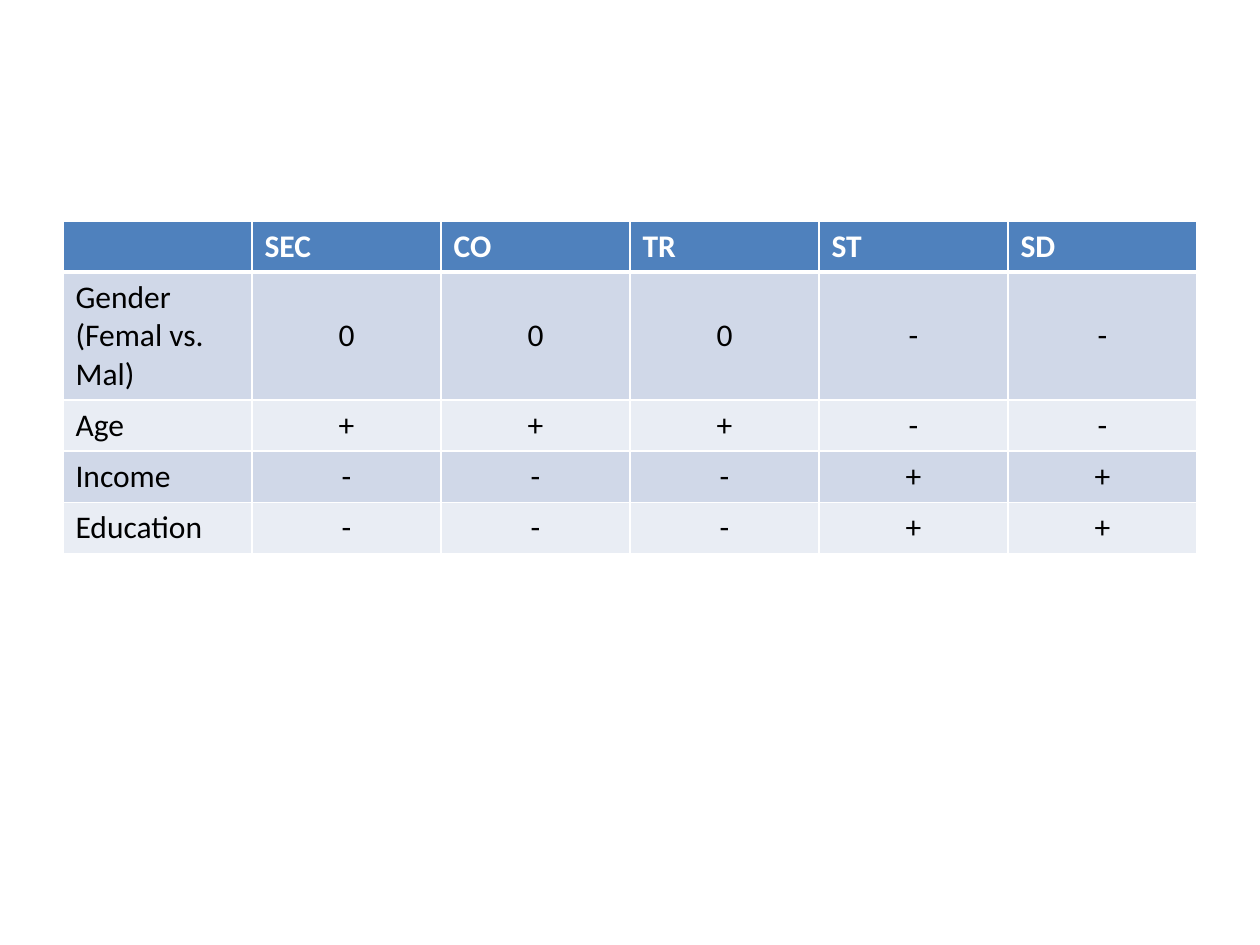
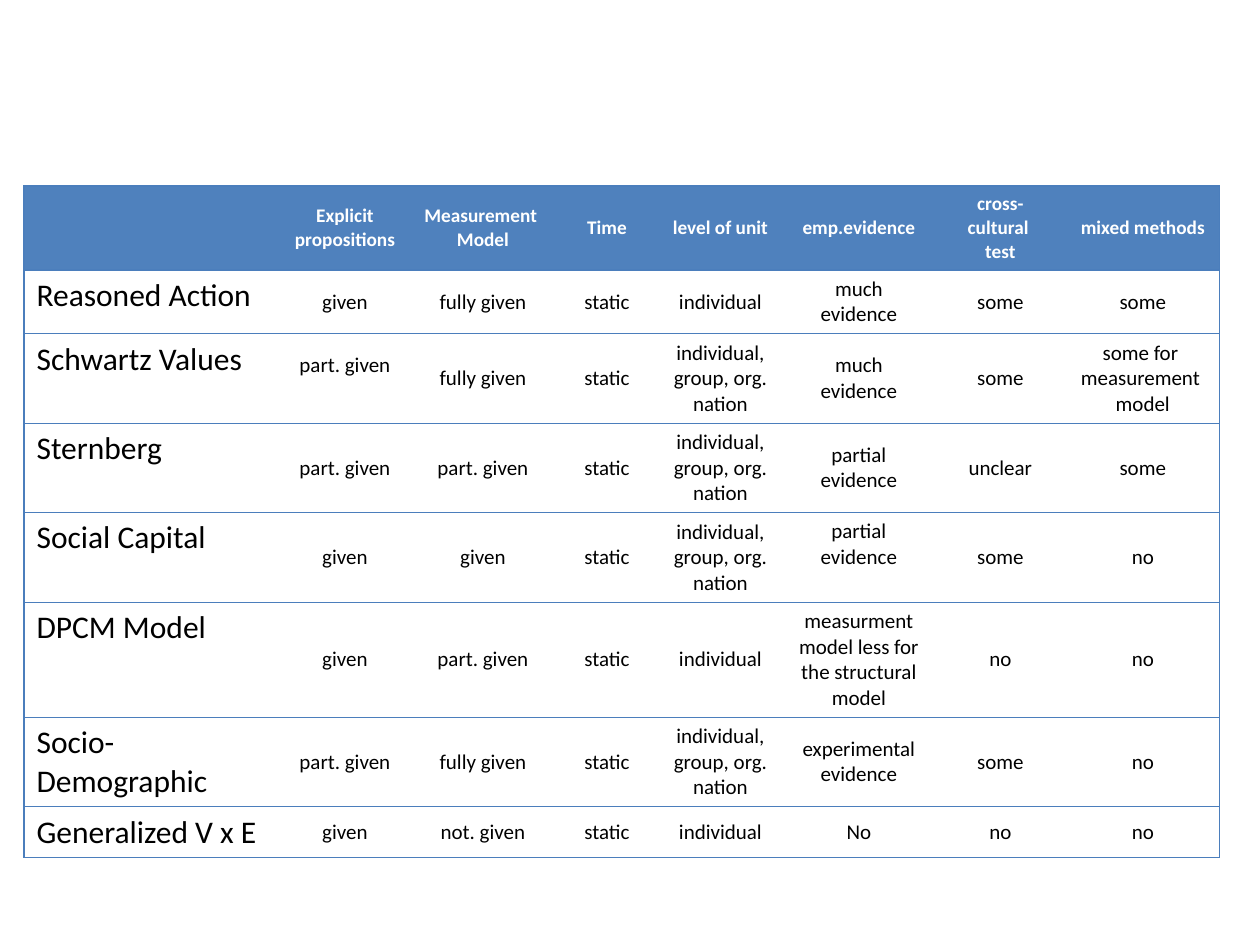
from lxml import etree
from pptx import Presentation, util as u
from pptx.dml.color import RGBColor
from pptx.enum import text
from pptx.oxml.ns import qn

# Content
ALL_LEVELS = "individual, group, org. nation"

EFFECTS_ROWS = [
    ["", "SEC", "CO", "TR", "ST", "SD"],
    ["Gender (Femal vs. Mal)", *"000--"],
    ["Age", *"+++--"],
    ["Income", *"---++"],
    ["Education", *"---++"],
]

THEORY_ROWS = [
    ["", "Explicit\npropositions", "Measurement \nModel", "Time", "level of unit",
     "emp.evidence", "cross-cultural \ntest", "mixed methods"],
    ["Reasoned Action", "given", "fully given", "static", "individual",
     "much evidence", "some", "some"],
    ["Schwartz Values", "part. given", "fully given", "static", ALL_LEVELS,
     "much evidence", "some", "some for \nmeasurement \nmodel"],
    ["Sternberg", "part. given", "part. given", "static", ALL_LEVELS,
     "partial evidence", "unclear", "some"],
    ["Social Capital", "given", "given", "static", ALL_LEVELS,
     "partial evidence", "some", "no"],
    ["DPCM Model", "given", "part. given", "static", "individual",
     "measurment model less for the structural model", "no", "no"],
    ["Socio-Demographic", "part. given", "fully given", "static", ALL_LEVELS,
     "experimental evidence", "some", "no"],
    ["Generalized V x E", "given", "not. given", "static", "individual",
     "No", "no", "no"],
]

# Theme: colours, type sizes and line widths in points
THEME = {
    "font": "Calibri",
    "header": "4F81BD", "bands": ("D0D8E8", "E9EDF4"), "rule": "4B7EBC",
    "light": "FFFFFF", "dark": "000000",
    "label": 18, "small_header": 11, "small_body": 12,
    "thin": 0.75, "grid": 1, "heavy": 3,
}
NO_TABLE_STYLE = "{2D5ABB26-0587-4C30-8999-92F81FD0307C}"

# Lengths in px
PX_PER_INCH = 126
SLIDE_SIZE = (1260, 945)
ROW_HEIGHT = 51
RAISED_MARGIN = 32

TABLES = [
    {"rows": EFFECTS_ROWS, "left": 63, "top": 221, "height": 330,
     "columns": [189] * 6, "header_size": THEME["label"],
     "body_size": THEME["label"], "center_header": False,
     "bands": THEME["bands"], "grid": True, "raised": set()},
    {"rows": THEORY_ROWS, "left": 24, "top": 186, "height": 663,
     "columns": [256, 130, 146, 102, 125, 152, 131, 154],
     "header_size": THEME["small_header"], "body_size": THEME["small_body"],
     "center_header": True, "bands": None, "grid": False,
     "raised": {(2, 1), (4, 5)}},
]


def px(length):
    return u.Emu(round(length * 914400 / PX_PER_INCH))


def apply(target, values):
    for name, value in values.items():
        setattr(target, name, value)


def cell_borders(layout, row, column):
    """Return (colour, points) for the left, right, top and bottom edges."""
    if layout["grid"]:
        line = (THEME["light"], THEME["grid"])
        heavy = (THEME["light"], THEME["heavy"])
        return {"lnL": line, "lnR": line,
                "lnT": heavy if row == 1 else line,
                "lnB": heavy if row == 0 else line}
    rule = (THEME["rule"], THEME["thin"])
    last = len(layout["columns"]) - 1
    return {"lnL": rule if column == 0 else None,
            "lnR": rule if column == last else None,
            "lnT": rule, "lnB": rule}


def draw_borders(cell, borders):
    properties = cell._tc.get_or_add_tcPr()
    for position, (tag, border) in enumerate(borders.items()):
        line = etree.Element(qn(f"a:{tag}"))
        if border:
            colour, points = border
            line.set("w", str(int(u.Pt(points))))
            fill = etree.SubElement(line, qn("a:solidFill"))
            etree.SubElement(fill, qn("a:srgbClr"), val=colour)
        else:
            line.set("w", "0")
            etree.SubElement(line, qn("a:noFill"))
        properties.insert(position, line)


def fill_cell(cell, colour):
    if colour:
        cell.fill.solid()
        cell.fill.fore_color.rgb = RGBColor.from_string(colour)
    else:
        cell.fill.background()


def format_cell(cell, layout, row, column):
    is_header, is_label = row == 0, column == 0
    centered = not is_label and (not is_header or layout["center_header"])
    bands = layout["bands"]
    band = bands[(row - 1) % len(bands)] if bands else None
    size = layout["header_size"] if is_header else layout["body_size"]
    if is_label:
        size = THEME["label"]

    cell.text_frame.text = layout["rows"][row][column]
    cell.vertical_anchor = (text.MSO_ANCHOR.MIDDLE if centered
                            else text.MSO_ANCHOR.TOP)
    if (row, column) in layout["raised"]:
        cell.margin_bottom = px(RAISED_MARGIN)
    for paragraph in cell.text_frame.paragraphs:
        paragraph.alignment = (text.PP_ALIGN.CENTER if centered
                               else text.PP_ALIGN.LEFT)
        for run in paragraph.runs:
            apply(run.font, {"name": THEME["font"], "size": u.Pt(size),
                             "bold": is_header})
            run.font.color.rgb = RGBColor.from_string(
                THEME["light" if is_header else "dark"])
    fill_cell(cell, THEME["header"] if is_header else band)
    draw_borders(cell, cell_borders(layout, row, column))


def add_table_slide(presentation, layout):
    slide = presentation.slides.add_slide(presentation.slide_layouts[6])
    rows, columns = layout["rows"], layout["columns"]
    shape = slide.shapes.add_table(
        len(rows), len(columns), px(layout["left"]), px(layout["top"]),
        px(sum(columns)), px(layout["height"]))
    table = shape.table
    apply(table, {"first_row": False, "horz_banding": False})
    table._tbl.tblPr.find(qn("a:tableStyleId")).text = NO_TABLE_STYLE

    # Rows grow from one common height to fit their text
    for column, width in zip(table.columns, columns):
        column.width = px(width)
    for row in table.rows:
        row.height = px(ROW_HEIGHT)
    shape.height = px(layout["height"])

    for row in range(len(rows)):
        for column in range(len(columns)):
            format_cell(table.cell(row, column), layout, row, column)


def main():
    presentation = Presentation()
    width, height = SLIDE_SIZE
    apply(presentation, {"slide_width": px(width), "slide_height": px(height)})
    for layout in TABLES:
        add_table_slide(presentation, layout)
    presentation.save("out.pptx")


if __name__ == "__main__":
    main()
